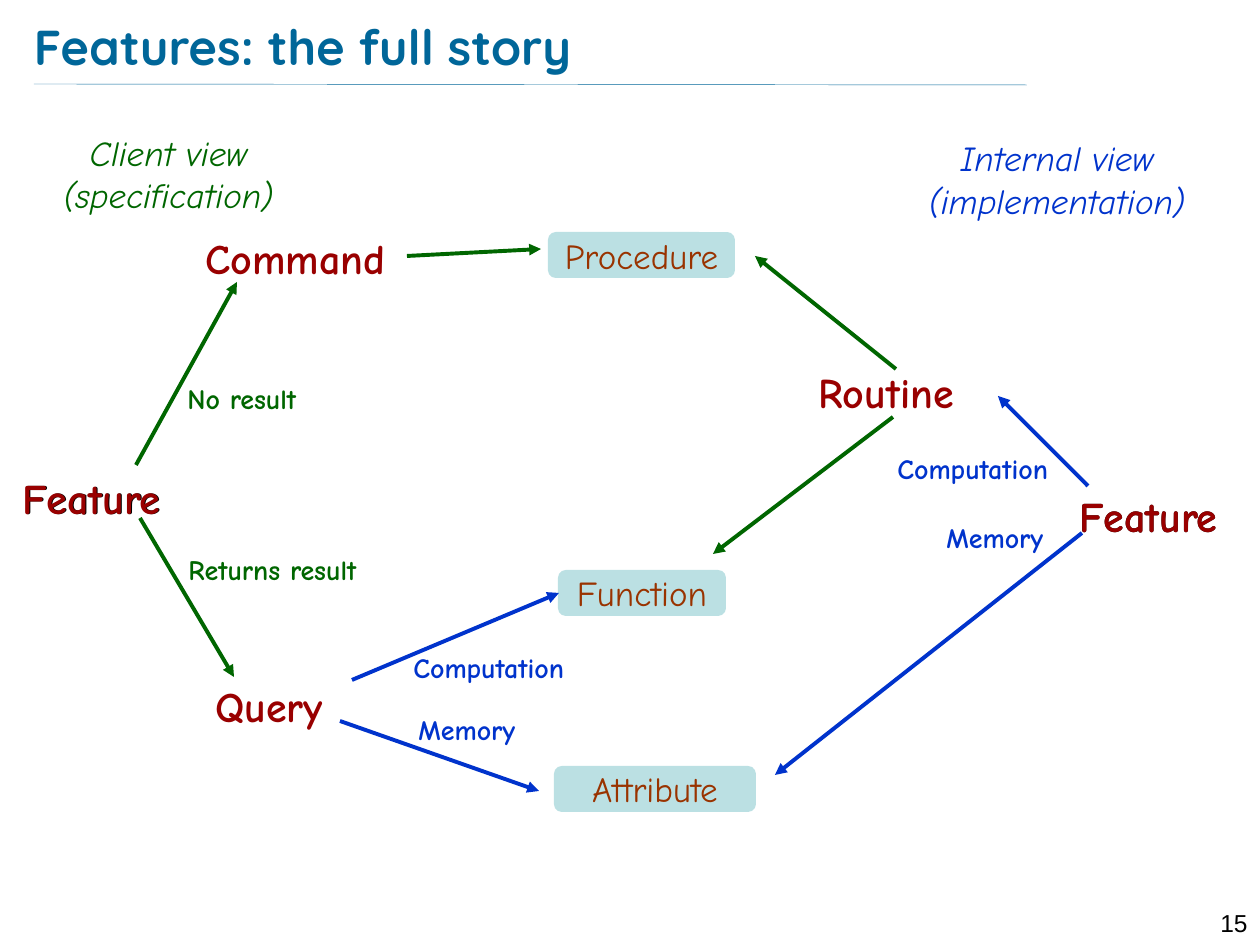
from lxml import etree
from pptx import Presentation
from pptx.dml.color import RGBColor
from pptx.enum.shapes import MSO_CONNECTOR, MSO_SHAPE
from pptx.enum.text import MSO_ANCHOR, MSO_AUTO_SIZE, PP_ALIGN
from pptx.oxml.ns import qn
from pptx.util import Emu, Pt

PX = 914400 // 126
LEFT, CENTER, RIGHT = PP_ALIGN.LEFT, PP_ALIGN.CENTER, PP_ALIGN.RIGHT
MIDDLE, TOP = MSO_ANCHOR.MIDDLE, MSO_ANCHOR.TOP
NO_FIT, GROW = MSO_AUTO_SIZE.NONE, MSO_AUTO_SIZE.SHAPE_TO_FIT_TEXT
STRAIGHT, ROUNDED = MSO_CONNECTOR.STRAIGHT, MSO_SHAPE.ROUNDED_RECTANGLE
TITLE_ONLY = 5

COLORS = {
    "title": "006699",
    "client": "006600",
    "internal": "0033CC",
    "concept": "990000",
    "kind": "993300",
    "kind_fill": "BBE0E3",
    "black": "000000",
}


class Diagram:
    font = "Comic Neue"

    def __init__(self, deck):
        self.page = deck.slides.add_slide(deck.slide_layouts[TITLE_ONLY])

    def color(self, name):
        return RGBColor.from_string(COLORS[name])

    def fill_text(self, shape, text, size, color, align=LEFT, anchor=TOP, fit=GROW,
                  inset=True, font=None, bold=False, italic=False):
        frame = shape.text_frame
        frame.word_wrap = True
        frame.auto_size = fit
        frame.vertical_anchor = anchor
        if not inset:
            frame.margin_left = frame.margin_right = 0
            frame.margin_top = frame.margin_bottom = 0
        frame.text = text
        for para in frame.paragraphs:
            para.alignment = align
            for span in para.runs:
                span.font.name = font or self.font
                span.font.size = Pt(size)
                span.font.bold = bold
                span.font.italic = italic
                span.font.color.rgb = self.color(color)

    def title(self, text, left, top, width, height):
        box = self.page.shapes.title
        box.left, box.top = Emu(left * PX), Emu(top * PX)
        box.width, box.height = Emu(width * PX), Emu(height * PX)
        self.fill_text(box, text, 28, "title", anchor=MIDDLE, fit=NO_FIT,
                       inset=False, font="Quicksand", bold=True)

    def text(self, text, left, top, width, height, size, color, **style):
        box = self.page.shapes.add_textbox(
            left * PX, top * PX, width * PX, height * PX)
        self.fill_text(box, text, size, color, **style)

    def concept(self, text, left, top, width, color="concept"):
        self.text(text, left, top, width, 64, 24, color, bold=True)

    def label(self, text, left, top, width, color):
        self.text(text, left, top, width, 47, 16, color, bold=True)

    def view(self, text, left, top, width, color):
        self.text(text, left, top, width, 84, 20, color,
                  align=CENTER, inset=False, italic=True)

    def kind(self, text, left, top, width):
        box = self.page.shapes.add_shape(
            ROUNDED, left * PX, top * PX, width * PX, 46 * PX)
        box.shadow.inherit = False
        box.adjustments[0] = 0.17
        box.fill.solid()
        box.fill.fore_color.rgb = self.color("kind_fill")
        box.line.fill.background()
        self.fill_text(box, text, 20, "kind", align=CENTER, anchor=MIDDLE, inset=False)

    def line(self, start, end, color, width):
        line = self.page.shapes.add_connector(
            STRAIGHT, *(value * PX for value in start + end))
        line.line.color.rgb = self.color(color)
        line.line.width = Pt(width)
        etree.SubElement(line._element.spPr, qn("a:effectLst"))
        return line

    def arrow(self, start, end, color):
        line = self.line(start, end, color, 2.25)
        outline = line._element.spPr.find(qn("a:ln"))
        etree.SubElement(outline, qn("a:tailEnd"), type="triangle")


def main():
    deck = Presentation()
    deck.slide_width, deck.slide_height = Emu(1260 * PX), Emu(945 * PX)
    diagram = Diagram(deck)

    diagram.title("Features: the full story", 34, 16, 1095, 60)
    diagram.line((34, 84), (1027, 85), "title", 0.25)
    diagram.text("15", 1191, 902, 69, 30, 14, "black", align=RIGHT, font="Arial")

    diagram.view("Client view\v(specification)", 43, 132, 251, "client")
    diagram.view("Internal view (implementation)", 910, 137, 294, "internal")

    for text, left, top, width in (
        ("Procedure", 548, 232, 187),
        ("Function", 558, 570, 168),
        ("Attribute", 554, 766, 202),
    ):
        diagram.kind(text, left, top, width)

    for text, left, top, width, color in (
        ("No result", 175, 375, 173, "client"),
        ("Returns result", 176, 546, 232, "client"),
        ("Computation", 401, 644, 188, "internal"),
        ("Memory", 406, 706, 147, "internal"),
        ("Computation", 885, 445, 188, "internal"),
        ("Memory", 934, 514, 147, "internal"),
    ):
        diagram.label(text, left, top, width, color)

    for start, end, color in (
        ((136, 465), (237, 282), "client"),
        ((140, 518), (234, 677), "client"),
        ((407, 256), (541, 249), "client"),
        ((896, 369), (755, 256), "client"),
        ((893, 417), (713, 554), "client"),
        ((352, 680), (559, 593), "internal"),
        ((340, 721), (539, 791), "internal"),
        ((1088, 486), (998, 396), "internal"),
        ((1082, 533), (775, 775), "internal"),
    ):
        diagram.arrow(start, end, color)

    for text, left, top, width, color in (
        ("Command", 193, 226, 248, "concept"),
        ("Query", 203, 674, 189, "concept"),
        ("Routine", 806, 360, 202, "concept"),
        ("Feature", 11, 466, 189, "black"),
        ("Feature", 10, 466, 189, "concept"),
        ("Feature", 1067, 484, 193, "black"),
        ("Feature", 1067, 484, 193, "concept"),
    ):
        diagram.concept(text, left, top, width, color)

    deck.save("out.pptx")


if __name__ == "__main__":
    main()
